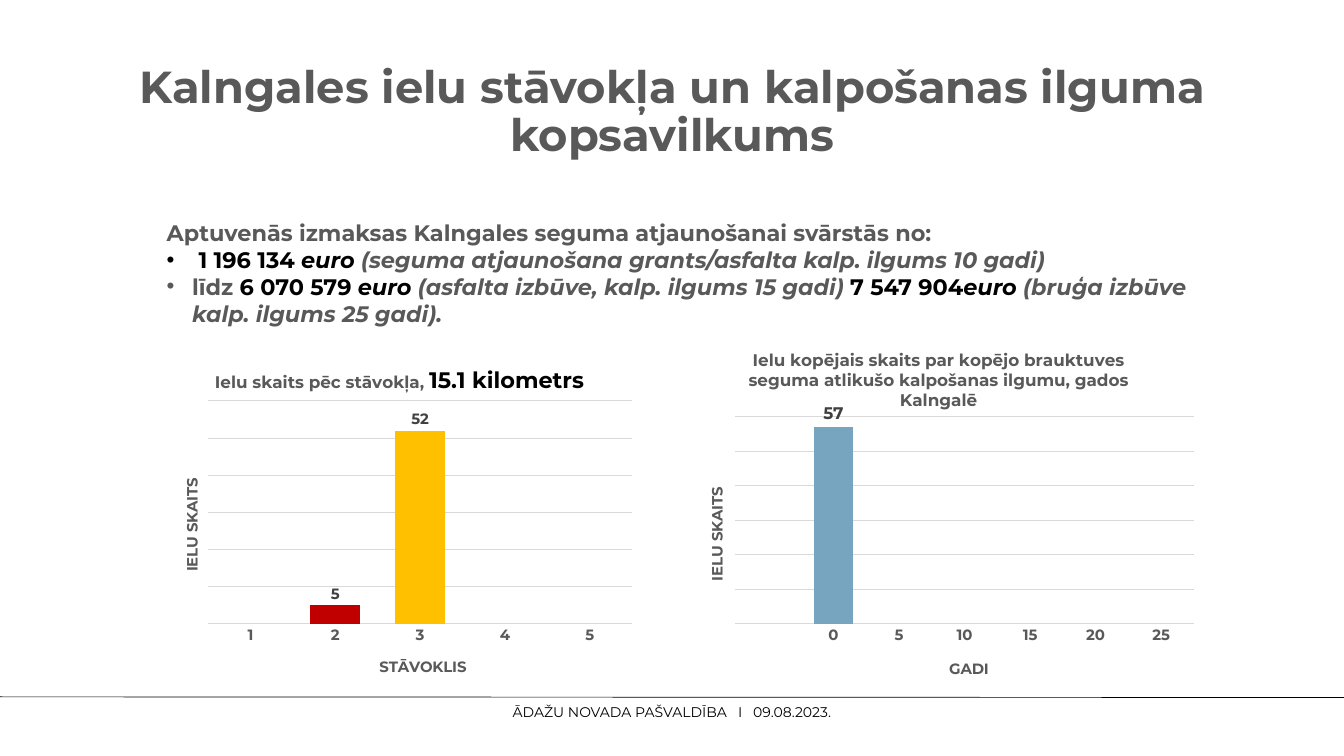
from lxml import etree
from pptx import Presentation
from pptx import util as u
from pptx.chart.data import CategoryChartData
from pptx.dml.color import RGBColor
from pptx.enum import chart as ch, shapes, text
from pptx.oxml import parse_xml
from pptx.oxml.ns import nsdecls, qn

FONT = "Montserrat"
BLACK = RGBColor(0, 0, 0)
GREY = RGBColor(0x59, 0x59, 0x59)
DARK = RGBColor(0x40, 0x40, 0x40)
GRID = RGBColor(0xD9, 0xD9, 0xD9)
RED = RGBColor(0xC0, 0, 0)
AMBER = RGBColor(0xFF, 0xC0, 0)
BLUE = RGBColor(0x77, 0xA4, 0xBE)


def style(font, size, color, bold=True, italic=False):
    """Set the common font properties."""
    font.name, font.size, font.bold, font.italic = FONT, u.Pt(size), bold, italic
    font.color.rgb = color


def add_run(p, content, size, color, bold=True, italic=False):
    """Append one styled run to a paragraph."""
    r = p.add_run()
    r.text = content
    style(r.font, size, color, bold, italic)


def place(sp, left, top, width, height):
    """Move and size a shape, in inches."""
    sp.left, sp.top = u.Inches(left), u.Inches(top)
    sp.width, sp.height = u.Inches(width), u.Inches(height)


def set_bullet(p, bulleted):
    """Give a paragraph a hanging bullet, or none."""
    pPr = p._p.get_or_add_pPr()
    indent = u.Inches(0.38) if bulleted else 0
    pPr.set("marL", str(indent))
    pPr.set("indent", str(-indent))
    if bulleted:
        etree.SubElement(pPr, qn("a:buFont")).set("typeface", "Arial")
        etree.SubElement(pPr, qn("a:buChar")).set("char", "•")
    else:
        etree.SubElement(pPr, qn("a:buNone"))


def fill_title(sp):
    """Write the slide title."""
    place(sp, 1.38, 0.6, 17.25, 2.17)
    tf = sp.text_frame
    tf.auto_size = text.MSO_AUTO_SIZE.NONE
    tf.vertical_anchor = text.MSO_ANCHOR.MIDDLE
    p = tf.paragraphs[0]
    p.alignment, p.line_spacing = text.PP_ALIGN.CENTER, 0.9
    add_run(p, "Kalngales ielu stāvokļa un kalpošanas ilguma kopsavilkums", 48, GREY)


def fill_costs(sp):
    """Write the cost estimate and its bullets."""
    place(sp, 2.38, 3.21, 16.25, 1.72)
    tf = sp.text_frame
    tf.auto_size = text.MSO_AUTO_SIZE.NONE
    lines = [
        [("Aptuvenās izmaksas Kalngales seguma atjaunošanai svārstās no:", GREY, False)],
        [(" 1 196 134 ", BLACK, False), ("euro ", BLACK, True),
         ("(seguma atjaunošana grants/asfalta kalp. ilgums 10 gadi)", GREY, True)],
        [("līdz ", GREY, False), ("6 070 579 ", BLACK, False), ("euro ", BLACK, True),
         ("(asfalta izbūve, kalp. ilgums 15 gadi) ", GREY, True),
         ("7 547 904", BLACK, False), ("euro ", BLACK, True),
         ("(bruģa izbūve kalp. ilgums 25 gadi).", GREY, True)],
    ]
    for i, runs in enumerate(lines):
        p = tf.add_paragraph() if i else tf.paragraphs[0]
        p.space_before = u.Pt(0)
        set_bullet(p, i > 0)
        for content, color, italic in runs:
            add_run(p, content, 24, color, italic=italic)


def make_layout(x, y, w=None, h=None):
    """Return a manual chart layout as fractions of the chart."""
    parts = [("x", x), ("y", y)]
    modes = '<c:xMode val="edge"/><c:yMode val="edge"/>'
    if w is not None:
        parts += [("w", w), ("h", h)]
        modes = '<c:layoutTarget val="inner"/>' + modes
    values = "".join(f'<c:{name} val="{value}"/>' for name, value in parts)
    return parse_xml(f'<c:layout {nsdecls("c")}><c:manualLayout>{modes}{values}'
                     "</c:manualLayout></c:layout>")


def set_chart_title(title, runs, position):
    """Write a chart or axis title and position it."""
    p = title.text_frame.paragraphs[0]
    for content, size, color in runs:
        add_run(p, content, size, color)
    element = title._element
    for old in element.findall(qn("c:layout")):
        element.remove(old)
    element.find(qn("c:tx")).addnext(make_layout(*position))


def add_column_chart(slide, box, cats, vals, color, label_size, plot, title, x_title, y_title):
    """Add a column chart with a title and two axis titles."""
    data = CategoryChartData()
    data.categories = cats
    data.add_series("Series 1", vals)
    chart = slide.shapes.add_chart(ch.XL_CHART_TYPE.COLUMN_CLUSTERED,
                                   *map(u.Inches, box), data).chart
    chart.has_legend = False
    chart.has_title = True
    set_chart_title(chart.chart_title, *title)
    chart.chart_title.include_in_layout = False

    cat_axis, val_axis = chart.category_axis, chart.value_axis
    cat_axis.major_tick_mark = ch.XL_TICK_MARK.NONE
    cat_axis.format.line.fill.background()
    style(cat_axis.tick_labels.font, 16, GREY)
    set_chart_title(cat_axis.axis_title, *x_title)
    val_axis.minimum_scale, val_axis.maximum_scale, val_axis.major_unit = 0, 60, 10
    val_axis.has_major_gridlines = True
    val_axis.major_gridlines.format.line.color.rgb = GRID
    val_axis.major_gridlines.format.line.width = u.Pt(0.75)
    set_chart_title(val_axis.axis_title, *y_title)
    body = val_axis.axis_title.text_frame._txBody.find(qn("a:bodyPr"))
    body.set("rot", "-5400000")
    body.set("vert", "horz")
    val_axis.visible = False

    bars = chart.plots[0]
    bars.gap_width, bars.vary_by_categories = 70, False
    series = bars.series[0]
    series.format.fill.solid()
    series.format.fill.fore_color.rgb = color
    labels = series.data_labels
    labels.show_value = True
    labels.position = ch.XL_LABEL_POSITION.OUTSIDE_END
    style(labels.font, label_size, DARK)

    area = chart._chartSpace.chart.plotArea
    for old in area.findall(qn("c:layout")):
        area.remove(old)
    area.insert(0, make_layout(*plot))
    return series


def add_footer(slide):
    """Add the footer rule and its text."""
    line = slide.shapes.add_connector(shapes.MSO_CONNECTOR.STRAIGHT, u.Inches(-0.01),
                                      u.Inches(10.37), u.Inches(20.01), u.Inches(10.38))
    line.line.color.rgb, line.line.width = BLACK, u.Pt(0.75)
    etree.SubElement(line._element.spPr, qn("a:effectLst"))
    sp = slide.shapes.add_textbox(*map(u.Inches, (0.1, 10.47, 19.8, 0.25)))
    tf = sp.text_frame
    tf.word_wrap = True
    tf.margin_left = tf.margin_right = tf.margin_top = tf.margin_bottom = 0
    p = tf.paragraphs[0]
    p.alignment, p.line_spacing = text.PP_ALIGN.CENTER, u.Pt(18)
    add_run(p, "ĀDAŽU NOVADA PAŠVALDĪBA   I   09.08.2023.", 15, BLACK, bold=False)


def main():
    """Build the street condition summary slide."""
    prs = Presentation()
    prs.slide_width, prs.slide_height = u.Inches(20), u.Inches(11.25)
    slide = prs.slides.add_slide(prs.slide_layouts[1])
    fill_title(slide.shapes.title)
    fill_costs(slide.placeholders[1])

    count = [("IELU SKAITS", 16, GREY)]
    condition = add_column_chart(
        slide, (2.38, 5.21, 7.17, 5.03), ["1", "2", "3", "4", "5"],
        [None, 5, 52, None, None], AMBER, 16, (0.1, 0.15, 0.88, 0.66),
        ([("Ielu skaits pēc stāvokļa, ", 18, GREY), ("15.1 kilometrs", 24, BLACK)], (0.11, 0.04)),
        ([("STĀVOKLIS", 16, GREY)], (0.45, 0.9)), (count, (0.04, 0.37)))
    poor = condition.points[1].format.fill
    poor.solid()
    poor.fore_color.rgb = RED
    add_column_chart(
        slide, (10.25, 4.92, 7.67, 5.32), ["", "0", "5", "10", "15", "20", "25"],
        [None, 57] + [None] * 5, BLUE, 18, (0.09, 0.24, 0.89, 0.58),
        ([("Ielu kopējais skaits par kopējo brauktuves seguma atlikušo kalpošanas "
           "ilgumu, gados Kalngalē", 18, GREY)], (0.11, 0.04)),
        ([("GADI", 16, GREY)], (0.5, 0.91)), (count, (0.03, 0.43)))

    add_footer(slide)
    prs.save("out.pptx")


if __name__ == "__main__":
    main()
